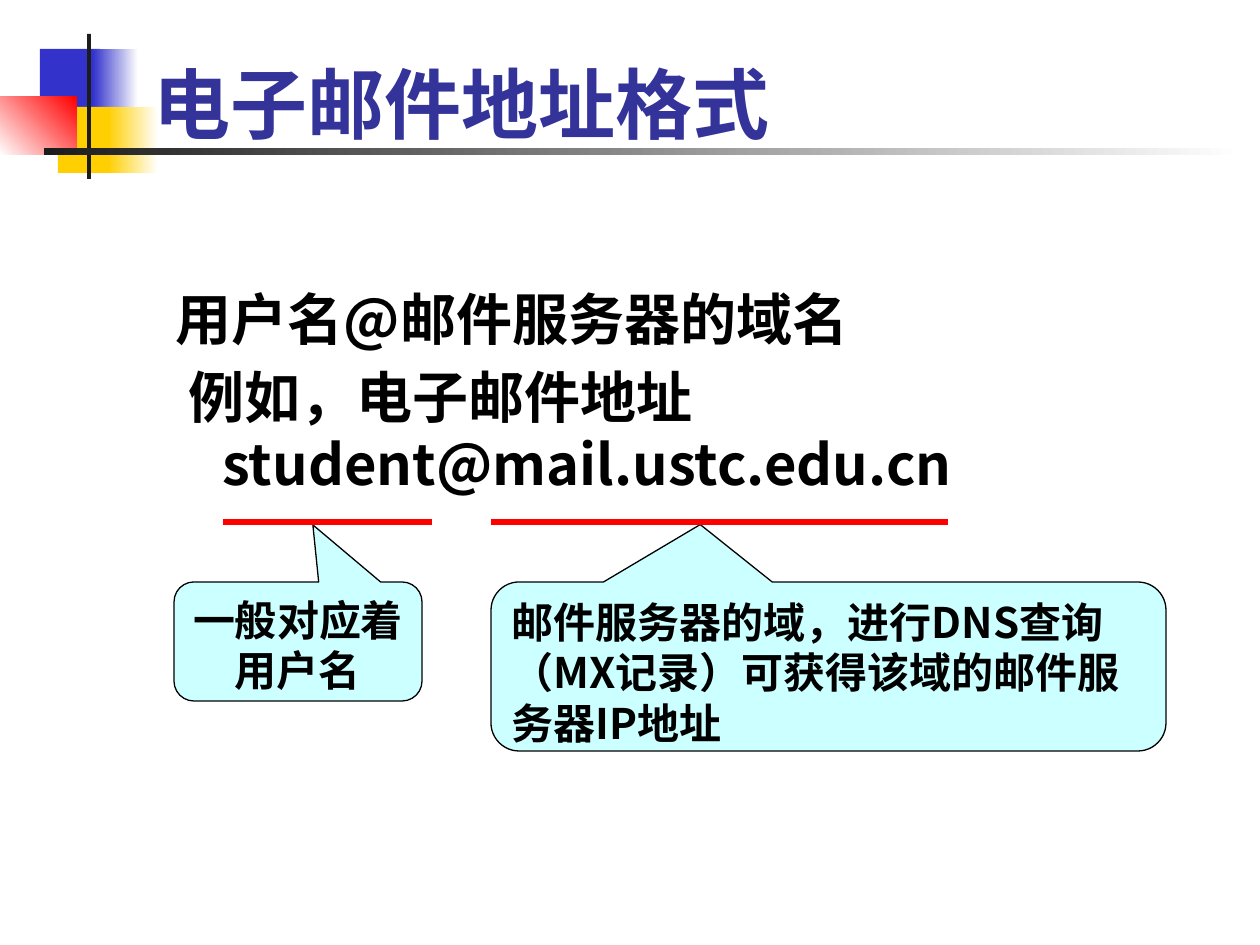
from pptx import Presentation, util as u
from pptx.dml.color import RGBColor
from pptx.enum import shapes, text
from pptx.oxml import ns
from lxml import etree

BLUE = RGBColor(0x33, 0x33, 0xCC)
GOLD = RGBColor(0xFF, 0xCF, 0x01)
RED = RGBColor(0xFF, 0x00, 0x00)
DARK = RGBColor(0x1C, 0x1C, 0x1C)
WHITE = RGBColor(0xFF, 0xFF, 0xFF)
BLACK = RGBColor(0x00, 0x00, 0x00)
TITLE_BLUE = RGBColor(0x33, 0x33, 0x99)
PALE_CYAN = RGBColor(0xCC, 0xFF, 0xFF)
FONT = "Noto Sans CJK SC"


def px(length):
    return u.Emu(round(length * 914400 / 126))


def add_block(page, area, start, end=None, angle=0):
    block = page.shapes.add_shape(shapes.MSO_SHAPE.RECTANGLE, *map(px, area))
    block.shadow.inherit = False
    block.line.fill.background()
    if end is None:
        block.fill.solid()
        block.fill.fore_color.rgb = start
        return
    block.fill.gradient()
    block.fill.gradient_angle = angle
    for stop, color in zip(block.fill.gradient_stops, (start, end)):
        stop.color.rgb = color


def write(box, paragraphs, size, color=BLACK, align=text.PP_ALIGN.LEFT, hang=0, gap=0):
    frame = box.text_frame
    frame.word_wrap = True
    frame.vertical_anchor = text.MSO_ANCHOR.TOP
    for index, words in enumerate(paragraphs):
        para = frame.add_paragraph() if index else frame.paragraphs[0]
        para.alignment = align
        if index:
            para.space_before = u.Pt(gap)
        if hang:
            properties = para._p.get_or_add_pPr()
            properties.set("marL", str(px(hang)))
            properties.set("indent", str(-px(hang)))
        span = para.add_run()
        span.text = words
        span.font.name = FONT
        span.font.size = u.Pt(size)
        span.font.bold = True
        span.font.color.rgb = color
        east_asian = etree.SubElement(span.font._element, ns.qn("a:ea"))
        east_asian.set("typeface", FONT)


def add_text(page, area, paragraphs, size, **style):
    box = page.shapes.add_textbox(*map(px, area))
    write(box, paragraphs, size, **style)


def add_callout(page, area, pointer, words, **style):
    callout = page.shapes.add_shape(
        shapes.MSO_SHAPE.ROUNDED_RECTANGULAR_CALLOUT, *map(px, area))
    callout.shadow.inherit = False
    callout.adjustments[0], callout.adjustments[1] = pointer
    callout.fill.solid()
    callout.fill.fore_color.rgb = PALE_CYAN
    callout.line.color.rgb = BLACK
    callout.line.width = u.Pt(0.75)
    write(callout, [words], 24, **style)


def add_underline(page, left, right, y):
    line = page.shapes.add_connector(
        shapes.MSO_CONNECTOR.STRAIGHT, px(left), px(y), px(right), px(y))
    line.line.color.rgb = RED
    line.line.width = u.Pt(3)
    etree.SubElement(line._element.spPr, ns.qn("a:effectLst"))


def add_decoration(page):
    add_block(page, (40, 49, 60, 66), BLUE)
    add_block(page, (93, 49, 45, 66), BLUE, WHITE)
    add_block(page, (58, 107, 58, 66), GOLD)
    add_block(page, (108, 107, 50, 66), GOLD, WHITE)
    add_block(page, (0, 97, 77, 58), WHITE, RED, angle=45)
    add_block(page, (87, 34, 4, 145), DARK)
    add_block(page, (44, 148, 1198, 7), DARK, WHITE)


def main():
    deck = Presentation()
    deck.slide_width, deck.slide_height = px(1260), px(945)
    page = deck.slides.add_slide(deck.slide_layouts[6])
    add_decoration(page)
    add_text(page, (163, 278, 1071, 567),
             ["用户名@邮件服务器的域名",
              " 例如，电子邮件地址 student@mail.ustc.edu.cn"],
             32, hang=47, gap=6.4)
    add_callout(page, (174, 582, 248, 119), (0.06, -0.98),
                "一般对应着用户名", align=text.PP_ALIGN.CENTER)
    add_callout(page, (491, 582, 675, 169), (-0.19, -0.84),
                "邮件服务器的域，进行DNS查询（MX记录）可获得该域的邮件服务器IP地址")
    add_underline(page, 223, 432, 522)
    add_underline(page, 491, 948, 522)
    add_text(page, (141, 50, 1086, 183), ["电子邮件地址格式"], 44, color=TITLE_BLUE)
    deck.save("out.pptx")


if __name__ == "__main__":
    main()
